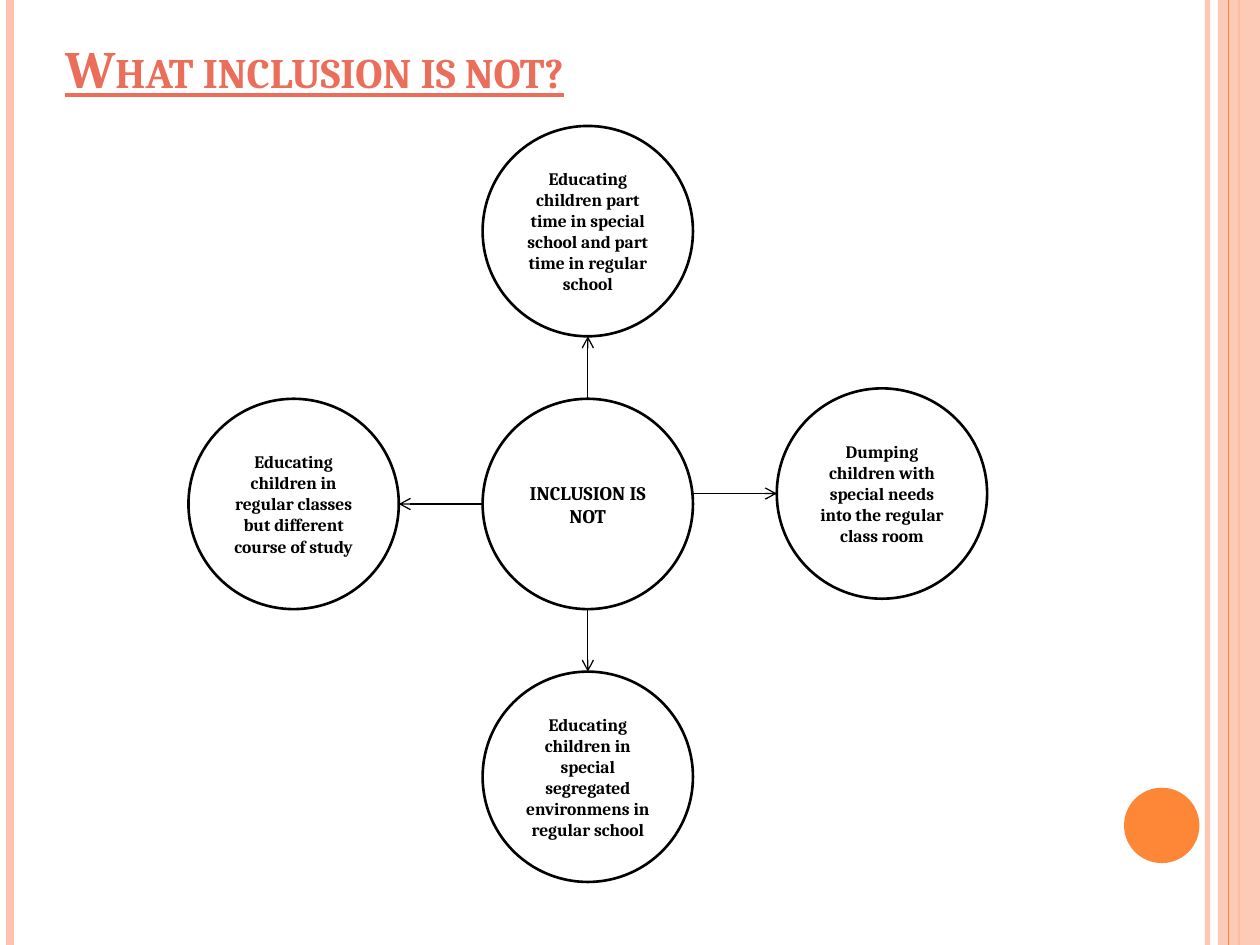
import pptx
import pptx.util
import pptx.dml.color
import pptx.enum.shapes
import pptx.enum.text
from lxml import etree
from pptx.oxml.ns import qn

Cm, Pt = pptx.util.Cm, pptx.util.Pt
RGBColor = pptx.dml.color.RGBColor
SHAPES = pptx.enum.shapes.MSO_SHAPE
ALIGN = pptx.enum.text.PP_ALIGN
ANCHOR = pptx.enum.text.MSO_ANCHOR

BLACK = RGBColor(0x00, 0x00, 0x00)
WHITE = RGBColor(0xFF, 0xFF, 0xFF)
CORAL = RGBColor(0xEB, 0x6E, 0x5A)
PINK = RGBColor(0xFE, 0xC3, 0xAE)
ORANGE = RGBColor(0xFE, 0x86, 0x37)
FONT = "Cambria"

# Content
TITLE = "What inclusion is not?"
HUB = "INCLUSION IS NOT"
# Text, direction from the hub (x, y), extra vertical shift in cm
SPOKES = [
    ("Educating children in special segregated environmens in regular school", (0, 1), 0),
    ("Dumping children with special needs into the regular class room", (1, 0), -0.21),
    ("Educating children in regular classes but different course of study", (-1, 0), 0),
    ("Educating children part time in special school and part time in regular school", (0, -1), 0),
]
# Vertical stripes: x in cm, colour, width in points, opacity in percent
STRIPES = [(24.34, PINK, 3, 93), (0.21, PINK, 4.5, 100), (24.98, ORANGE, 1.5, 100)]
THIN_STRIPE = (24.77, ORANGE, 0.75, 100)

# Geometry in cm
WIDTH, HEIGHT = 25.4, 19.05
HUB_X, HUB_Y = 11.85, 10.16
DIAMETER = 4.24
STEP_X, STEP_Y = 5.93, 5.5


def write_text(shape, text, size, color=BLACK, align=ALIGN.CENTER, anchor=ANCHOR.MIDDLE):
    frame = shape.text_frame
    frame.word_wrap = True
    frame.vertical_anchor = anchor
    para = frame.paragraphs[0]
    para.alignment = align
    span = para.add_run()
    span.text = text
    span.font.name, span.font.size, span.font.bold = FONT, Pt(size), True
    span.font.color.rgb = color
    return span


def set_opacity(fill_parent, percent):
    color = fill_parent.find(qn("a:solidFill"))[0]
    etree.SubElement(color, qn("a:alpha")).set("val", str(percent * 1000))


def add_line(page, start, end, color, width, opacity=100, arrow=False):
    line = page.shapes.add_connector(pptx.enum.shapes.MSO_CONNECTOR.STRAIGHT,
                                     *map(Cm, start + end))
    line.line.color.rgb = color
    line.line.width = Pt(width)
    properties = line._element.spPr
    outline = properties.find(qn("a:ln"))
    if opacity < 100:
        set_opacity(outline, opacity)
    if arrow:
        etree.SubElement(outline, qn("a:tailEnd")).set("type", "arrow")
    etree.SubElement(properties, qn("a:effectLst"))


def add_stripe(page, x, color, width, opacity):
    add_line(page, (x, 0), (x, HEIGHT), color, width, opacity)


def add_plain_shape(page, kind, left, top, width, height, fill):
    shape = page.shapes.add_shape(kind, Cm(left), Cm(top), Cm(width), Cm(height))
    shape.shadow.inherit = False
    shape.fill.solid()
    shape.fill.fore_color.rgb = fill
    shape.line.fill.background()
    return shape


def add_circle(page, x, y, text, size):
    circle = add_plain_shape(page, SHAPES.OVAL, x - DIAMETER / 2, y - DIAMETER / 2,
                             DIAMETER, DIAMETER, WHITE)
    circle.line.color.rgb = BLACK
    circle.line.width = Pt(1.5)
    write_text(circle, text, size)


def main():
    deck = pptx.Presentation()
    deck.slide_width, deck.slide_height = Cm(WIDTH), Cm(HEIGHT)
    page = deck.slides.add_slide(deck.slide_layouts[5])

    # Side decoration
    for stripe in STRIPES:
        add_stripe(page, *stripe)
    band = add_plain_shape(page, SHAPES.RECTANGLE, 24.55, 0, 0.85, HEIGHT, PINK)
    set_opacity(band._element.spPr, 87)
    add_stripe(page, *THIN_STRIPE)
    add_plain_shape(page, SHAPES.OVAL, 22.66, 15.88, 1.52, 1.52, ORANGE)

    # Title
    title = page.shapes.title
    title.left, title.top, title.width, title.height = Cm(1.06), Cm(0), Cm(20.75), Cm(2.12)
    span = write_text(title, TITLE, 30, color=CORAL, align=ALIGN.LEFT, anchor=ANCHOR.BOTTOM)
    span.font.underline = True
    span.font._element.set("cap", "small")

    # Hub, spokes and the arrows between them
    add_circle(page, HUB_X, HUB_Y, HUB, 11)
    radius = DIAMETER / 2
    for text, (across, down), shift in SPOKES:
        x, y = HUB_X + across * STEP_X, HUB_Y + down * STEP_Y + shift
        add_circle(page, x, y, text, 10)
        start = (HUB_X + across * radius, HUB_Y + down * radius + shift)
        end = (x - across * radius, y - down * radius)
        add_line(page, start, end, BLACK, 0.75, arrow=True)

    deck.save("out.pptx")


if __name__ == "__main__":
    main()
